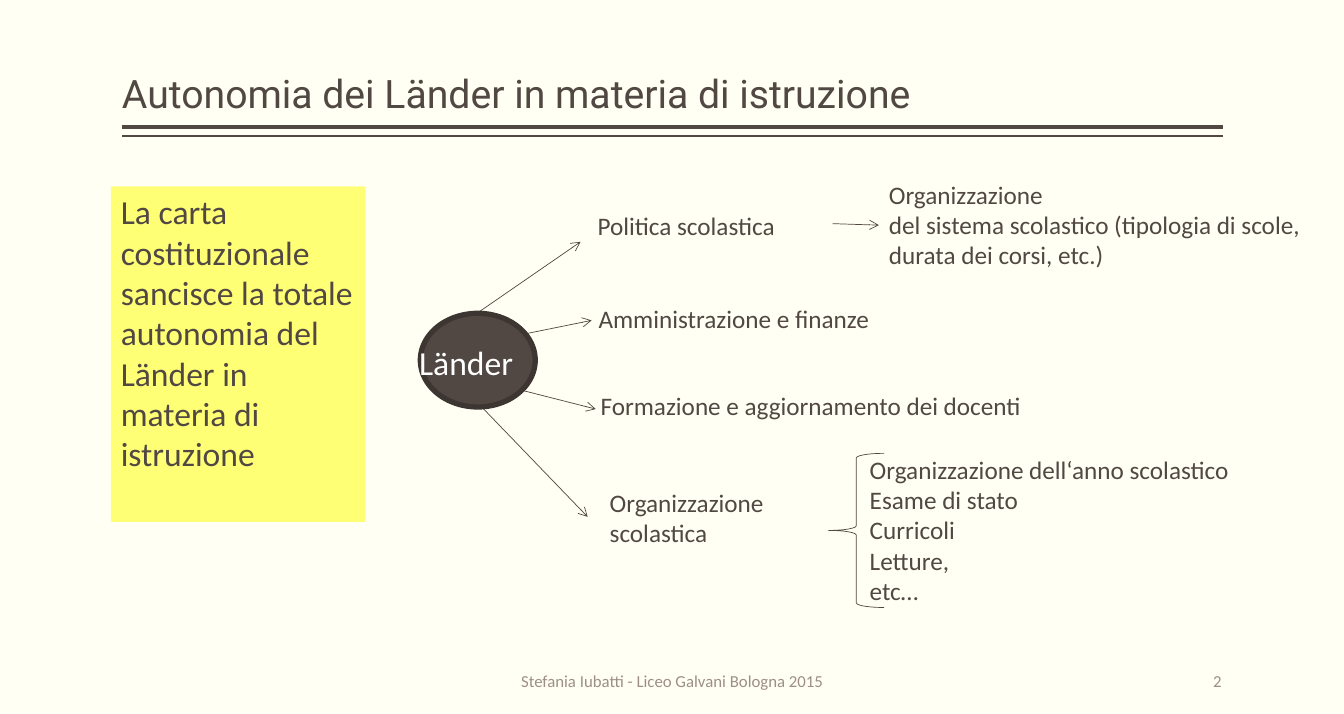
from dataclasses import dataclass

from pptx import Presentation
from pptx import util as u
from pptx.dml.color import RGBColor
from pptx.enum import shapes, text
from pptx.oxml.ns import qn
from lxml import etree

CM_PER_INCH = 2.54
SLIDE_WIDTH = u.Inches(40 / 3)
SLIDE_HEIGHT = u.Inches(18 / CM_PER_INCH)

COLORS = {
    "background": "FFFFF3",
    "ink": "514843",
    "node_border": "3C3532",
    "note": "FFFF76",
    "footer": "9D8F88",
    "white": "FFFFFF",
}


@dataclass(frozen=True)
class Box:
    left: float
    top: float
    width: float
    height: float

    def lengths(self) -> tuple:
        return tuple(u.Inches(n) for n in (self.left, self.top, self.width, self.height))


@dataclass(frozen=True)
class Label:
    box: Box
    lines: tuple[str, ...]
    size: float = 18
    color: str = "ink"
    font: str = "Calibri"
    align: text.PP_ALIGN = text.PP_ALIGN.LEFT
    anchor: text.MSO_ANCHOR = text.MSO_ANCHOR.TOP
    side_inset: float = 0.1
    line_spacing: float = 1.0


@dataclass(frozen=True)
class Line:
    start: tuple[float, float]
    end: tuple[float, float]
    width: float = 0.5
    arrow: bool = True


RULES = [
    Line((12.13, 1.26), (1.21, 1.26), 3, False),
    Line((12.13, 1.35), (1.21, 1.35), 1, False),
]
BRANCH_ARROWS = [
    Line((4.63, 3.18), (5.76, 2.4)),
    Line((5.18, 3.32), (5.87, 3.18)),
    Line((4.73, 3.76), (5.91, 4.06)),
    Line((4.76, 4.02), (5.83, 5.13)),
]
DETAIL_ARROW = Line((8.26, 2.22), (8.72, 2.23))

TITLE = Label(Box(1.21, 0.5, 10.92, 0.71), ("Autonomia dei Länder in materia di istruzione",),
              28, font="Roboto", anchor=text.MSO_ANCHOR.BOTTOM, side_inset=0, line_spacing=0.9)
NOTE = Label(Box(1.1, 1.85, 2.52, 3.33),
             ("La carta costituzionale sancisce la totale autonomia del Länder in materia di istruzione",), 24)
NODE = Label(Box(4.06, 3.34, 1.32, 0.5), ("Länder",), 24, "white")
SYSTEM_DETAIL = Label(Box(8.72, 1.73, 4.29, 1.01), (
    "Organizzazione",
    "del sistema scolastico (tipologia di scole, durata dei corsi, etc.)",
))
LABELS = [
    TITLE,
    Label(Box(5.83, 2.04, 2.79, 0.4), ("Politica scolastica",)),
    Label(Box(5.84, 2.96, 3.47, 0.4), ("Amministrazione e finanze",)),
    Label(Box(5.86, 3.83, 4.96, 0.4), ("Formazione e aggiornamento dei docenti",)),
    Label(Box(5.95, 4.79, 2.05, 0.71), ("Organizzazione", "scolastica")),
    Label(Box(8.53, 4.46, 4.35, 1.62), (
        "Organizzazione dell‘anno scolastico", "Esame di stato", "Curricoli", "Letture,", "etc…",
    )),
    Label(Box(3.21, 6.57, 6.92, 0.38), ("Stefania Iubatti - Liceo Galvani Bologna 2015",), 12,
          "footer", align=text.PP_ALIGN.CENTER, anchor=text.MSO_ANCHOR.MIDDLE, side_inset=0),
    Label(Box(10.12, 6.57, 2, 0.38), ("2",), 12,
          "footer", align=text.PP_ALIGN.RIGHT, anchor=text.MSO_ANCHOR.MIDDLE, side_inset=0),
]


def rgb(name: str) -> RGBColor:
    return RGBColor.from_string(COLORS[name])


def write_label(shape, label: Label) -> None:
    frame = shape.text_frame
    frame.word_wrap = True
    frame.vertical_anchor = label.anchor
    frame.margin_left = frame.margin_right = u.Inches(label.side_inset)
    frame.margin_top = frame.margin_bottom = u.Inches(0.05)
    for index, line in enumerate(label.lines):
        paragraph = frame.add_paragraph() if index else frame.paragraphs[0]
        paragraph.alignment = label.align
        paragraph.line_spacing = label.line_spacing
        run = paragraph.add_run()
        run.text = line
        run.font.name = label.font
        run.font.size = u.Pt(label.size)
        run.font.color.rgb = rgb(label.color)


def add_label(slide, label: Label):
    shape = slide.shapes.add_textbox(*label.box.lengths())
    write_label(shape, label)
    return shape


def add_line(slide, line: Line):
    connector = slide.shapes.add_connector(
        shapes.MSO_CONNECTOR.STRAIGHT, *(u.Inches(n) for n in line.start + line.end))
    connector.line.color.rgb = rgb("ink")
    connector.line.width = u.Pt(line.width)
    if line.arrow:
        outline = connector.line._get_or_add_ln()
        etree.SubElement(outline, qn("a:tailEnd"), type="arrow")
    etree.SubElement(connector._element.spPr, qn("a:effectLst"))
    return connector


def add_figure(slide, kind: shapes.MSO_SHAPE, box: Box, fill: str = "",
               border: str = "", border_width: float = 0.5):
    shape = slide.shapes.add_shape(kind, *box.lengths())
    shape.shadow.inherit = False
    if fill:
        shape.fill.solid()
        shape.fill.fore_color.rgb = rgb(fill)
    else:
        shape.fill.background()
    if border:
        shape.line.color.rgb = rgb(border)
        shape.line.width = u.Pt(border_width)
    else:
        shape.line.fill.background()
    return shape


def main() -> None:
    presentation = Presentation()
    presentation.slide_width = SLIDE_WIDTH
    presentation.slide_height = SLIDE_HEIGHT
    slide = presentation.slides.add_slide(presentation.slide_layouts[6])
    slide.background.fill.solid()
    slide.background.fill.fore_color.rgb = rgb("background")

    for line in RULES + BRANCH_ARROWS:
        add_line(slide, line)
    for label in LABELS:
        add_label(slide, label)

    add_figure(slide, shapes.MSO_SHAPE.OVAL, Box(4.17, 3.11, 1.14, 0.93), "ink", "node_border", 3.78)
    add_label(slide, NODE)
    add_figure(slide, shapes.MSO_SHAPE.LEFT_BRACE, Box(8.22, 4.5, 0.55, 1.53), border="ink")

    system_detail = add_label(slide, SYSTEM_DETAIL)
    add_line(slide, DETAIL_ARROW).end_connect(system_detail, 1)

    note = add_figure(slide, shapes.MSO_SHAPE.RECTANGLE, NOTE.box, "note")
    write_label(note, NOTE)
    presentation.save("out.pptx")


if __name__ == "__main__":
    main()
